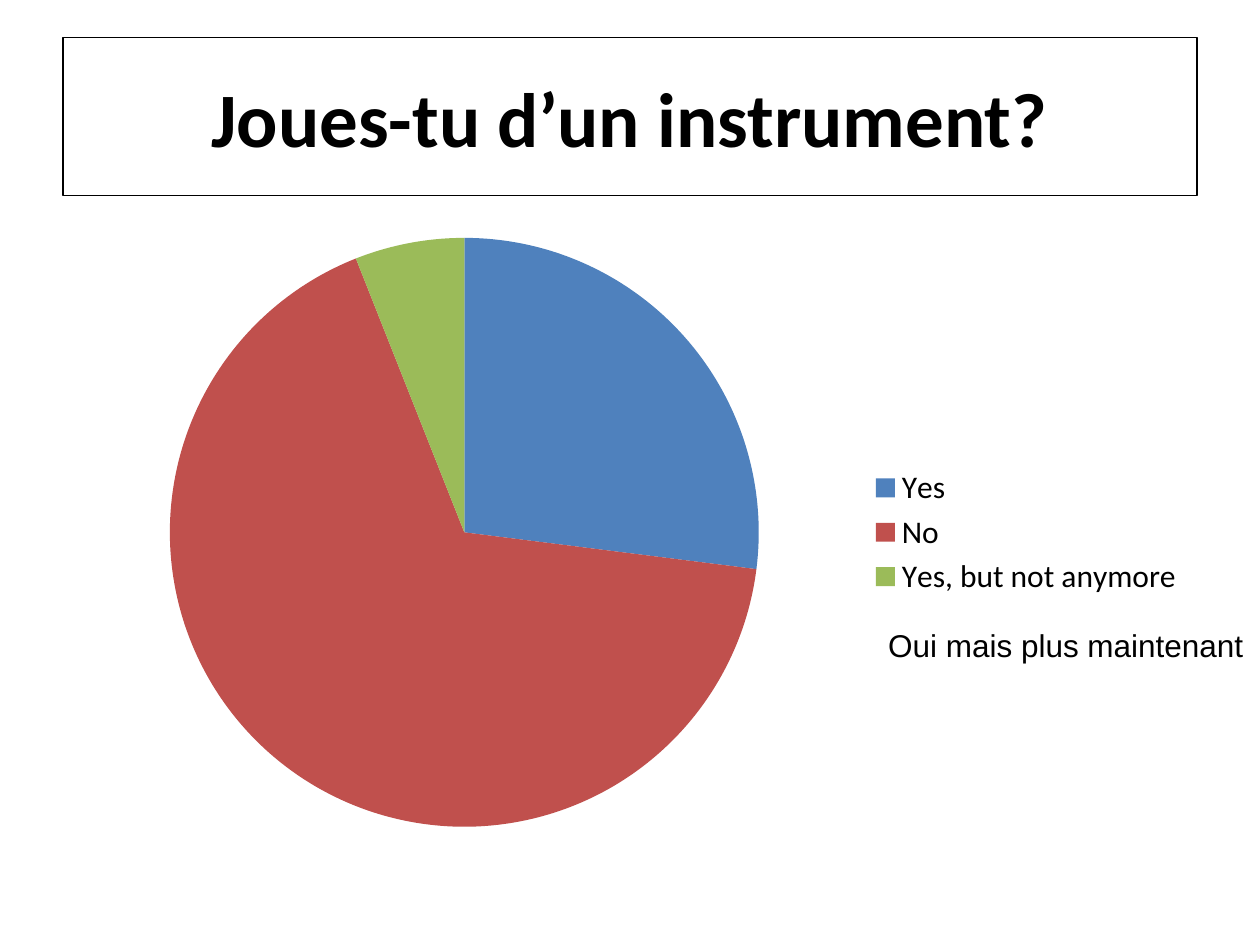
from pptx import Presentation
from pptx.chart.data import CategoryChartData
from pptx.dml.color import RGBColor
from pptx.enum.chart import XL_CHART_TYPE, XL_LEGEND_POSITION
from pptx.enum.text import MSO_ANCHOR, PP_ALIGN
from pptx.util import Inches, Pt

BLACK = RGBColor(0x00, 0x00, 0x00)
BLUE = RGBColor(0x4F, 0x81, 0xBD)
RED = RGBColor(0xC0, 0x50, 0x4D)
GREEN = RGBColor(0x9B, 0xBB, 0x59)

COLUMNS, ROWS = 20, 15


class SurveySlide:
    heading_font = "Calibri"
    note_font = "Arial"
    heading_size = Pt(44)
    body_size = Pt(18)

    def __init__(self, deck):
        self.column = deck.slide_width / COLUMNS
        self.row = deck.slide_height / ROWS
        self.slide = deck.slides.add_slide(deck.slide_layouts[5])

    def area(self, column, row, columns, rows):
        return (int(column * self.column), int(row * self.row),
                int(columns * self.column), int(rows * self.row))

    def style(self, font, name, size, bold=False):
        font.name, font.size, font.bold = name, size, bold
        font.color.rgb = BLACK

    def title(self, wording, *cells):
        question = self.slide.shapes.title
        question.left, question.top, question.width, question.height = self.area(*cells)
        question.line.color.rgb = BLACK
        question.line.width = Pt(0.75)
        frame = question.text_frame
        frame.text = wording
        frame.vertical_anchor = MSO_ANCHOR.MIDDLE
        frame.paragraphs[0].alignment = PP_ALIGN.CENTER
        self.style(frame.paragraphs[0].runs[0].font, self.heading_font, self.heading_size, True)

    def pie(self, answers, *cells):
        data = CategoryChartData()
        data.categories = [answer for answer, _, _ in answers]
        data.add_series("Series 1", [share for _, share, _ in answers])
        chart = self.slide.shapes.add_chart(XL_CHART_TYPE.PIE, *self.area(*cells), data).chart
        self.style(chart.font, self.heading_font, self.body_size)
        chart.has_title = False
        chart.has_legend = True
        chart.legend.position = XL_LEGEND_POSITION.RIGHT
        chart.legend.include_in_layout = False
        plot = chart.plots[0]
        plot.vary_by_categories = True
        for index, (_, _, color) in enumerate(answers):
            fill = plot.series[0].points[index].format.fill
            fill.solid()
            fill.fore_color.rgb = color

    def note(self, wording, *cells):
        frame = self.slide.shapes.add_textbox(*self.area(*cells)).text_frame
        frame.word_wrap = False
        frame.text = wording
        self.style(frame.paragraphs[0].runs[0].font, self.note_font, self.body_size)


def main():
    deck = Presentation()
    deck.slide_width, deck.slide_height = Inches(10), Inches(7.5)
    survey = SurveySlide(deck)
    survey.title("Joues-tu d’un instrument?", 1, 0.6, 18, 2.5)
    survey.pie([("Yes", 27, BLUE), ("No", 67, RED), ("Yes, but not anymore", 6, GREEN)],
               1, 3.5, 18, 9.9)
    survey.note("Oui mais plus maintenant", 13.9, 9.84, 6.1, 0.8)
    deck.save("out.pptx")


if __name__ == "__main__":
    main()
